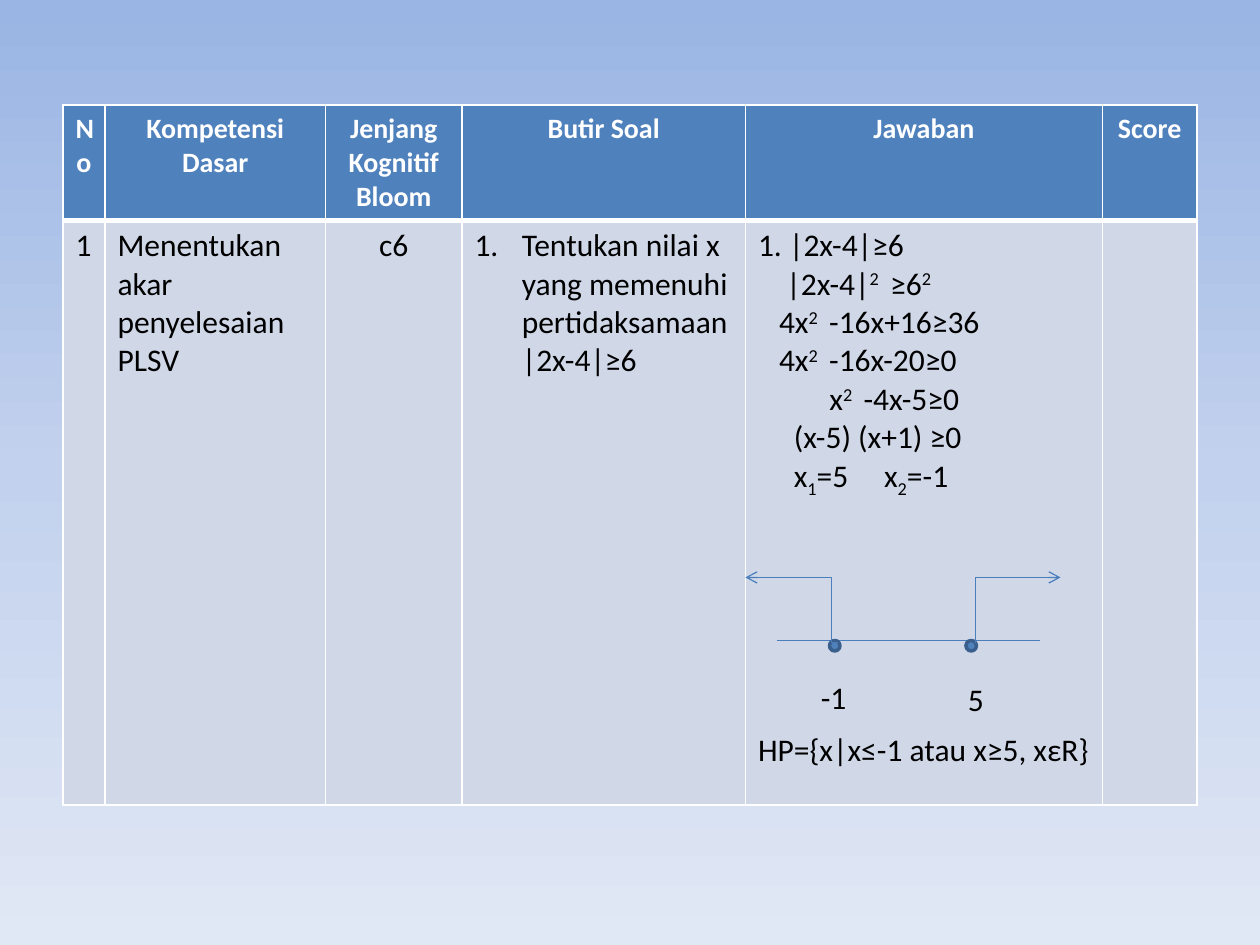
from dataclasses import dataclass

from lxml import etree
from pptx import Presentation
from pptx import util as u
from pptx.dml.color import RGBColor
from pptx.enum import shapes, text
from pptx.oxml.ns import qn

PX = 7620  # EMU per px, 120 px to the inch
BLUE, PALE, WHITE, BLACK = "4F81BD", "D0D8E8", "FFFFFF", "000000"
LINE, DOT_EDGE = "4B7EBC", "3A5F8C"
BASELINES = {"^": 30000, "_": -25000}
CENTER = text.PP_ALIGN.CENTER


@dataclass(frozen=True)
class Step:
    """One line of working; a term led by ^ is raised, by _ lowered."""
    terms: tuple[str, ...]
    indent: int = 0
    tab: int = 0
    space_before: int = 0


@dataclass(frozen=True)
class Root:
    """A solution on the number line, with its arrow and label."""
    label: str
    dot_x: int
    label_x: int
    label_y: int
    stem_x: int
    arrow_x: int
    bend: int


@dataclass(frozen=True)
class Column:
    heading: str
    width: int
    entry: tuple[Step, ...] = ()
    centered: bool = False
    numbered: bool = False


SOLUTION = (
    Step(("1. |2x-4|≥6",)),
    Step(("|2x-4|", "^2 ", " ≥6", "^2"), 27),
    Step(("4x", "^2 ", " -16x+16≥36"), 20),
    Step(("4x", "^2 ", " -16x-20≥0"), 20),
    Step(("x", "^2 ", " -4x-5≥0"), 68),
    Step(("(x-5) (x+1) ≥0",), 34),
    Step(("x", "_1", "=5\tx", "_2", "=-1"), 34, tab=120),
    Step(("HP={x|x≤-1 atau x≥5, xεR}",), space_before=132),
)
COLUMNS = (
    Column("No", 40, (Step(("1",)),)),
    Column("Kompetensi Dasar", 210, (Step(("Menentukan akar penyelesaian PLSV",)),)),
    Column("Jenjang Kognitif Bloom", 130, (Step(("c6",)),), centered=True),
    Column("Butir Soal", 270,
           (Step(("Tentukan nilai x yang memenuhi pertidaksamaan |2x-4|≥6",)),),
           numbered=True),
    Column("Jawaban", 340, SOLUTION),
    Column("Score", 90),
)
ROW_HEIGHTS = (100, 557)
ROOTS = (
    Root("-1", 790, 770, 640, 798, 710, 6900),
    Root("5", 920, 910, 642, 929, 1010, 0),
)
AXIS_Y, STEM_Y, ARROW_Y, DOT_SIZE = 610, 612, 550, 10


def px(length: int) -> u.Emu:
    return u.Emu(length * PX)


def rgb(value: str) -> RGBColor:
    return RGBColor.from_string(value)


def sub(parent, tag: str, **attributes):
    return etree.SubElement(parent, qn(tag), {k: str(v) for k, v in attributes.items()})


def write(paragraph, terms, *, size=18, color=BLACK, bold=False, align=None) -> None:
    if align is not None:
        paragraph.alignment = align
    for term in terms:
        run = paragraph.add_run()
        baseline = BASELINES.get(term[0])
        run.text = term[1:] if baseline else term
        run.font.name, run.font.size, run.font.bold = "Calibri", u.Pt(size), bold
        run.font.color.rgb = rgb(color)
        if baseline:
            run.font._element.set("baseline", str(baseline))


def write_steps(frame, column: Column) -> None:
    for index, step in enumerate(column.entry):
        paragraph = frame.add_paragraph() if index else frame.paragraphs[0]
        write(paragraph, step.terms, align=CENTER if column.centered else None)
        if step.space_before:
            paragraph.space_before = u.Pt(step.space_before)
        properties = paragraph._p.get_or_add_pPr()
        if column.numbered:
            properties.set("marL", str(px(45)))
            properties.set("indent", str(px(-45)))
            sub(properties, "a:buFont", typeface="+mj-lt")
            sub(properties, "a:buAutoNum", type="arabicPeriod")
        elif step.indent:
            properties.set("marL", "0")
            properties.set("indent", str(px(step.indent)))
        if step.tab:
            sub(sub(properties, "a:tabLst"), "a:tab", pos=px(step.tab), algn="l")


def style_cell(cell, fill: str, top: int, bottom: int) -> None:
    """Fill a cell and give it white borders, widths in points."""
    properties = cell._tc.get_or_add_tcPr()
    for tag, width in (("a:lnL", 1), ("a:lnR", 1), ("a:lnT", top), ("a:lnB", bottom)):
        border = sub(properties, tag, w=u.Pt(width))
        sub(sub(border, "a:solidFill"), "a:srgbClr", val=WHITE)
    cell.fill.solid()
    cell.fill.fore_color.rgb = rgb(fill)


def add_question_table(slide) -> None:
    table = slide.shapes.add_table(2, len(COLUMNS), px(60), px(100),
                                   px(sum(c.width for c in COLUMNS)),
                                   px(sum(ROW_HEIGHTS))).table
    for row, height in zip(table.rows, ROW_HEIGHTS):
        row.height = px(height)
    for index, column in enumerate(COLUMNS):
        table.columns[index].width = px(column.width)
        header, entry = table.cell(0, index), table.cell(1, index)
        style_cell(header, BLUE, 1, 3)
        style_cell(entry, PALE, 3, 1)
        write(header.text_frame.paragraphs[0], (column.heading,),
              size=16, color=WHITE, bold=True, align=CENTER)
        write_steps(entry.text_frame, column)


def add_line(slide, kind, start: tuple[int, int], end: tuple[int, int]):
    line = slide.shapes.add_connector(kind, *map(px, start + end))
    line.line.color.rgb = rgb(LINE)
    line.line.width = u.Pt(0.75)
    sub(line._element.spPr, "a:effectLst")
    return line


def add_root_arrow(slide, root: Root) -> None:
    arrow = add_line(slide, shapes.MSO_CONNECTOR.ELBOW,
                     (root.stem_x, STEM_Y), (root.arrow_x, ARROW_Y))
    guides = arrow._element.spPr.find(".//" + qn("a:avLst"))
    sub(guides, "a:gd", name="adj1", fmla=f"val {root.bend}")
    sub(arrow.line._get_or_add_ln(), "a:tailEnd", type="arrow")


def add_root_dot(slide, root: Root) -> None:
    dot = slide.shapes.add_shape(shapes.MSO_SHAPE.FLOWCHART_CONNECTOR, px(root.dot_x),
                                 px(AXIS_Y), px(DOT_SIZE), px(DOT_SIZE))
    dot.shadow.inherit = False
    dot.fill.solid()
    dot.fill.fore_color.rgb = rgb(BLUE)
    dot.line.color.rgb = rgb(DOT_EDGE)
    dot.line.width = u.Pt(2)


def add_root_label(slide, root: Root) -> None:
    frame = slide.shapes.add_textbox(px(root.label_x), px(root.label_y),
                                     px(50), px(48)).text_frame
    frame.word_wrap = True
    frame.auto_size = text.MSO_AUTO_SIZE.SHAPE_TO_FIT_TEXT
    write(frame.paragraphs[0], (root.label,))


def paint_background(slide) -> None:
    fill = slide.background.fill
    fill.gradient()
    fill.gradient_angle = 270
    stops = slide.element.find(".//" + qn("a:gsLst"))
    for stop in list(stops):
        stops.remove(stop)
    for position, color in ((0, "9AB5E4"), (50000, "C2D1ED"), (100000, "E1E8F5")):
        sub(sub(stops, "a:gs", pos=position), "a:srgbClr", val=color)


def main() -> None:
    deck = Presentation()
    deck.slide_width, deck.slide_height = px(1200), px(900)
    slide = deck.slides.add_slide(deck.slide_layouts[6])
    paint_background(slide)
    add_question_table(slide)
    add_line(slide, shapes.MSO_CONNECTOR.STRAIGHT, (740, AXIS_Y), (990, AXIS_Y))
    for draw in (add_root_dot, add_root_label, add_root_arrow):
        for root in ROOTS:
            draw(slide, root)
    deck.save("out.pptx")


if __name__ == "__main__":
    main()
